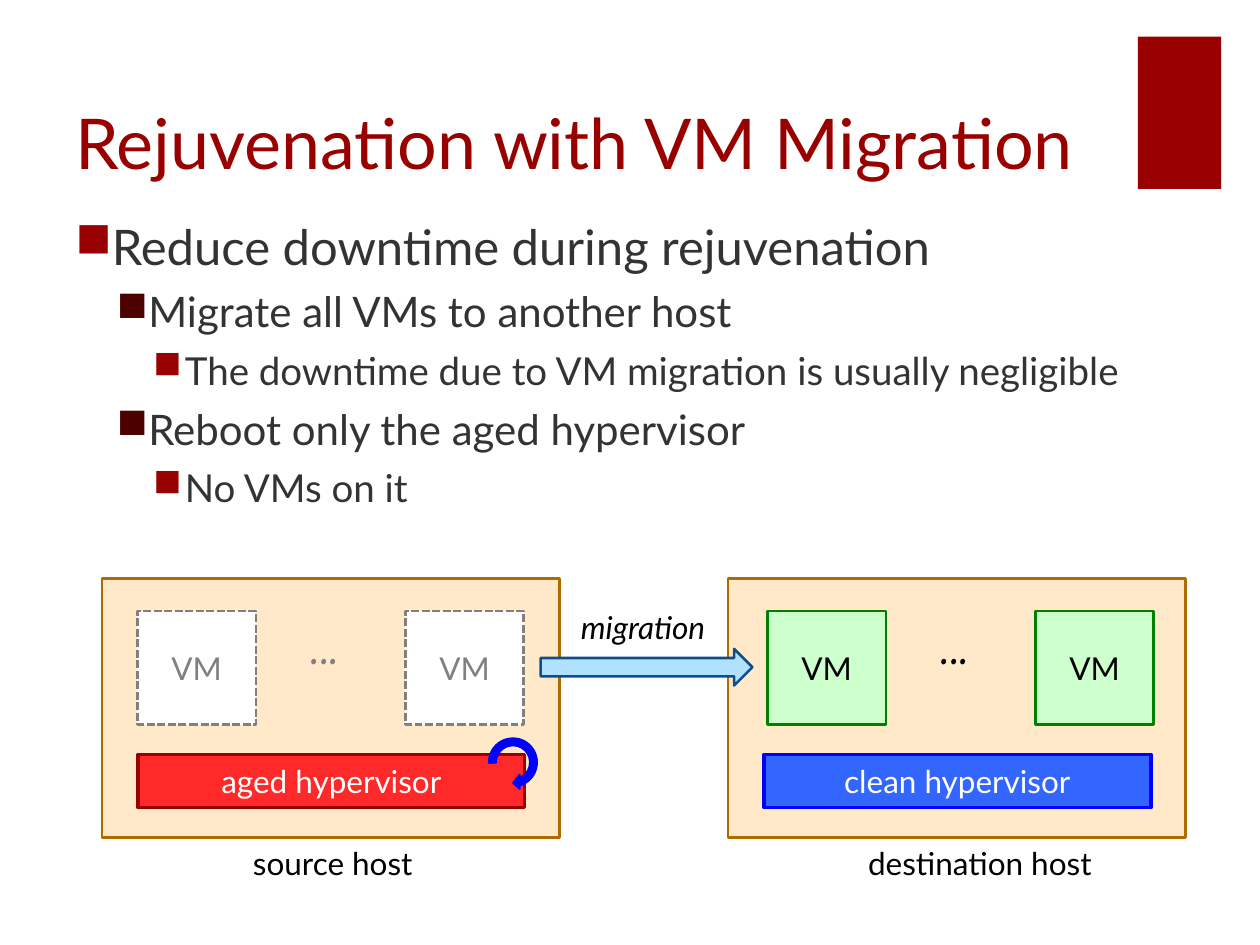
from dataclasses import dataclass

from lxml import etree
from pptx import Presentation
from pptx.dml.color import RGBColor
from pptx.enum.dml import MSO_LINE
from pptx.enum.shapes import MSO_SHAPE
from pptx.enum.text import MSO_ANCHOR, PP_ALIGN
from pptx.oxml.ns import qn
from pptx.util import Cm, Pt

RECT = MSO_SHAPE.RECTANGLE
ARROW = MSO_SHAPE.RIGHT_ARROW
LOOP = MSO_SHAPE.CIRCULAR_ARROW
DASH = MSO_LINE.SQUARE_DOT
TOP, MIDDLE, BOTTOM = MSO_ANCHOR.TOP, MSO_ANCHOR.MIDDLE, MSO_ANCHOR.BOTTOM
LEFT, CENTER = PP_ALIGN.LEFT, PP_ALIGN.CENTER


@dataclass(frozen=True)
class Theme:
    """Hold the colours, fonts and type sizes of the slide."""
    font: str = "Lato"
    comic: str = "Comic Neue"
    title: int = 40
    label: int = 18
    dots: int = 36
    sizes: tuple = (28, 24, 22)
    marks: tuple = ("990000", "4D0000", "990000")
    brand: str = "990000"
    body: str = "333333"
    black: str = "000000"
    white: str = "FFFFFF"
    gray: str = "808080"
    host: tuple = ("FFE9C8", "B06B00")
    aged: tuple = ("FF2929", "990000")
    clean: tuple = ("3366FF", "0000FF")
    ghost: tuple = ("FFFFFF", "808080")
    live: tuple = ("CCFFCC", "008000")
    move: tuple = ("B0E2FF", "104E8B")
    loop: tuple = ("0000FF", "0000FF")


THEME = Theme()
POINTS = (
    (0, "Reduce downtime during rejuvenation"),
    (1, "Migrate all VMs to another host"),
    (2, "The downtime due to VM migration is usually negligible"),
    (1, "Reboot only the aged hypervisor"),
    (2, "No VMs on it"),
)
INDENTS = (0.64, 1.47, 2.21)
HANG = 0.64


def write(para, text, size=THEME.label, color=THEME.black, font=THEME.font,
          italic=False, align=LEFT):
    """Put formatted text into a paragraph."""
    para.alignment = align
    run = para.add_run()
    run.text = text
    run.font.size = Pt(size)
    run.font.name = font
    run.font.italic = italic
    run.font.color.rgb = RGBColor.from_string(color)


def add_box(slide, x, y, w, h, wrap=False, anchor=TOP):
    """Add an empty text box and return its frame."""
    frame = slide.shapes.add_textbox(Cm(x), Cm(y), Cm(w), Cm(h)).text_frame
    frame.word_wrap = wrap
    frame.vertical_anchor = anchor
    return frame


def add_label(slide, x, y, w, h, text, **style):
    """Add one line of free text."""
    write(add_box(slide, x, y, w, h).paragraphs[0], text, **style)


def add_block(slide, x, y, w, h, paint, kind=RECT, width=1.5, dash=None,
              text="", color=THEME.black):
    """Add a filled shape with an outline and centred text."""
    shape = slide.shapes.add_shape(kind, Cm(x), Cm(y), Cm(w), Cm(h))
    shape.shadow.inherit = False
    fill, line = paint
    shape.fill.solid()
    shape.fill.fore_color.rgb = RGBColor.from_string(fill)
    if line:
        shape.line.color.rgb = RGBColor.from_string(line)
        shape.line.width = Pt(width)
        shape.line.dash_style = dash
    else:
        shape.line.fill.background()
    if text:
        shape.text_frame.vertical_anchor = MIDDLE
        write(shape.text_frame.paragraphs[0], text, color=color, align=CENTER)
    return shape


def add_mark(para, level):
    """Give a paragraph its square bullet and indent."""
    props = para._p.get_or_add_pPr()
    props.set("marL", str(Cm(INDENTS[level])))
    props.set("indent", str(-Cm(HANG)))
    paint = etree.SubElement(props, qn("a:buClr"))
    etree.SubElement(paint, qn("a:srgbClr"), val=THEME.marks[level])
    etree.SubElement(props, qn("a:buChar"), char="■")


def add_points(slide):
    """Add the bullet list."""
    frame = add_box(slide, 1.27, 4.24, 22.66, 13.41, wrap=True)
    for i, (level, text) in enumerate(POINTS):
        para = frame.add_paragraph() if i else frame.paragraphs[0]
        para.level = level
        para.space_before = Pt(6)
        write(para, text, size=THEME.sizes[level], color=THEME.body)
        add_mark(para, level)


def add_host(slide, x, inset, core, paint, guest, ink, dash=None):
    """Add a host with its hypervisor and row of VMs."""
    add_block(slide, x, 11.66, 9.22, 5.23, THEME.host)
    add_block(slide, x + 0.72, 15.21, 7.8, 1.07, paint, width=2,
              text=core, color=THEME.white)
    row = x + inset
    for left in (row, row + 5.4):
        add_block(slide, left, 12.32, 2.39, 2.29, guest, dash=dash,
                  text="VM", color=ink)
    add_label(slide, row + 3.22, 12.01, 1.47, 1.8, "...", size=THEME.dots,
              color=ink, font=THEME.comic)


def add_loop(slide):
    """Add the reboot arrow."""
    loop = add_block(slide, 9.78, 14.81, 1.12, 1.12, THEME.loop, kind=LOOP,
                     width=1)
    loop.rotation = 90
    for i, value in enumerate((0.13, 11.42, 204.58, 53.21, 0.13)):
        loop.adjustments[i] = value


def main():
    """Build and save the slide."""
    deck = Presentation()
    deck.slide_width, deck.slide_height = Cm(25.4), Cm(19.05)
    slide = deck.slides.add_slide(deck.slide_layouts[6])
    add_block(slide, 22.94, 0.74, 1.68, 3.07, (THEME.brand, None))
    title = add_box(slide, 1.27, 0.64, 21.39, 3.18, wrap=True, anchor=BOTTOM)
    write(title.paragraphs[0], "Rejuvenation with VM Migration",
          size=THEME.title, color=THEME.brand)
    add_points(slide)
    add_host(slide, 2.06, 0.71, "aged hypervisor", THEME.aged,
             THEME.ghost, THEME.gray, dash=DASH)
    add_host(slide, 14.68, 0.79, "clean hypervisor", THEME.clean,
             THEME.live, THEME.black)
    add_block(slide, 10.9, 13.08, 4.27, 0.74, THEME.move, kind=ARROW)
    add_label(slide, 11.46, 12.14, 3.38, 1.02, "migration", italic=True)
    add_label(slide, 4.85, 16.89, 3.78, 1.02, "source host")
    add_label(slide, 17.25, 16.89, 5.03, 1.02, "destination host")
    add_loop(slide)
    deck.save("out.pptx")


if __name__ == "__main__":
    main()
